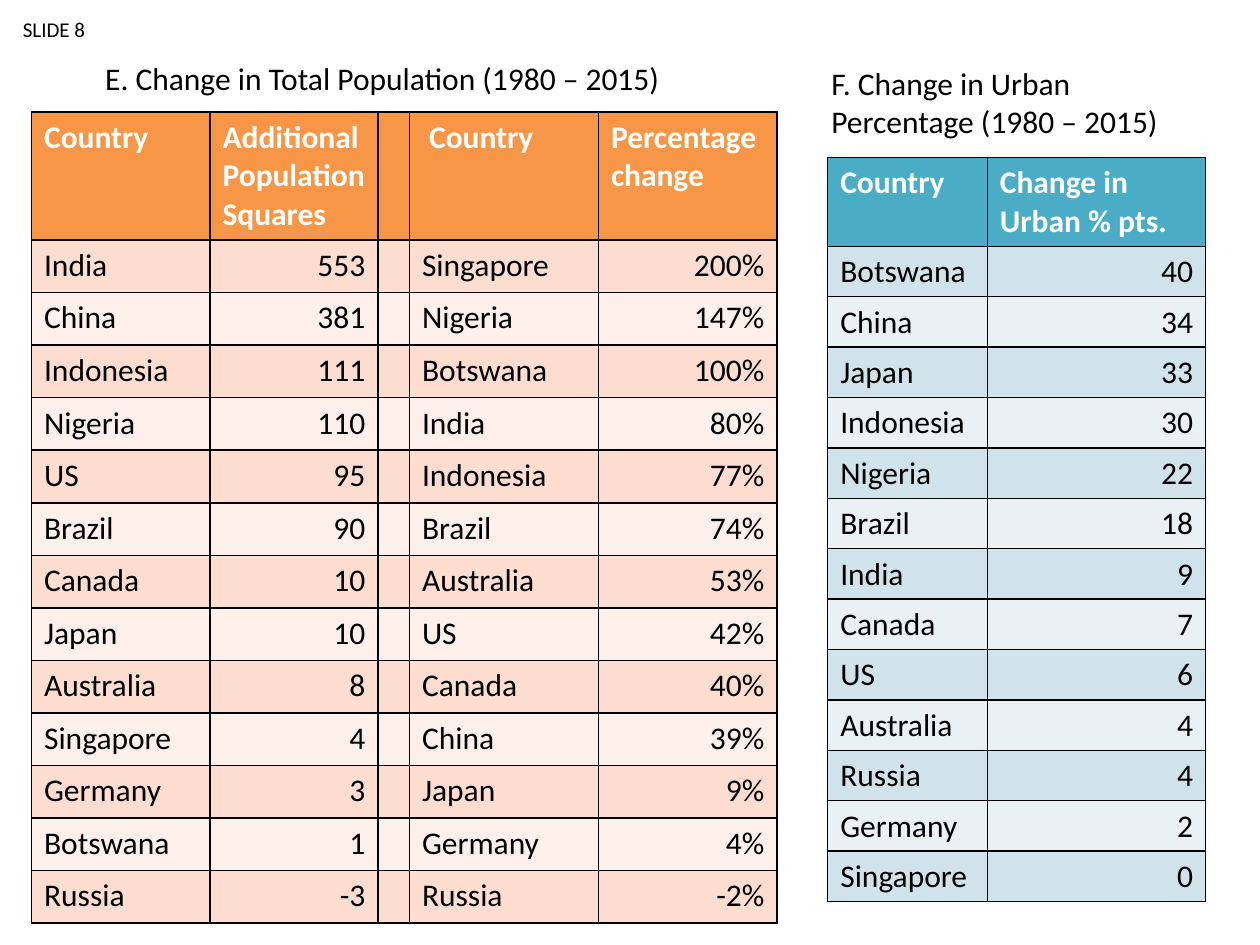
from pptx import Presentation
from pptx.dml.color import RGBColor
from pptx.enum.text import MSO_AUTO_SIZE as AutoSize, PP_ALIGN as Align
from pptx.oxml import parse_xml
from pptx.oxml.ns import nsdecls
from pptx.util import Pt

# Content
LABELS = [
    {"text": "E. Change in Total Population (1980 – 2015)",
     "box": (53, 30, 337, 29), "size": 18, "wrap": False},
    {"text": "F. Change in Urban Percentage (1980 – 2015)",
     "box": (468, 33, 222, 51), "size": 18, "wrap": True},
    {"text": "SLIDE 8", "box": (6, 6, 50, 22), "size": 12, "wrap": False},
]

POPULATION = {
    "left": 18, "top": 64, "columns": [102, 96, 18, 108, 102],
    "header_height": 73.2, "row_height": 30.04, "number_columns": (1, 4),
    "header_fill": "F79646", "bands": ("FCDDCF", "FDEFE9"),
    "header": ("Country", "Additional Population Squares", "", " Country",
               "Percentage change"),
    "rows": [
        ("India", "553", "", "Singapore", "200%"),
        ("China", "381", "", "Nigeria", "147%"),
        ("Indonesia", "111", "", "Botswana", "100%"),
        ("Nigeria", "110", "", "India", "80%"),
        ("US", "95", "", "Indonesia", "77%"),
        ("Brazil", "90", "", "Brazil", "74%"),
        ("Canada", "10", "", "Australia", "53%"),
        ("Japan", "10", "", "US", "42%"),
        ("Australia", "8", "", "Canada", "40%"),
        ("Singapore", "4", "", "China", "39%"),
        ("Germany", "3", "", "Japan", "9%"),
        ("Botswana", "1", "", "Germany", "4%"),
        ("Russia", "-3", "", "Russia", "-2%"),
    ],
}

URBAN = {
    "left": 473, "top": 90, "columns": [91.2, 124.8],
    "header_height": 50.4, "row_height": 28.8, "number_columns": (1,),
    "header_fill": "4BACC6", "bands": ("D0E3EA", "E9F1F5"),
    "header": ("Country", "Change in Urban % pts."),
    "rows": [
        ("Botswana", "40"), ("China", "34"), ("Japan", "33"),
        ("Indonesia", "30"), ("Nigeria", "22"), ("Brazil", "18"),
        ("India", "9"), ("Canada", "7"), ("US", "6"), ("Australia", "4"),
        ("Russia", "4"), ("Germany", "2"), ("Singapore", "0"),
    ],
}

CELL_FORMAT = {"margin_left": Pt(7.2), "margin_right": Pt(7.2),
               "margin_top": Pt(3.6), "margin_bottom": Pt(3.2)}


def color(hex_value):
    return RGBColor.from_string(hex_value)


def apply_format(target, values):
    for name, value in values.items():
        setattr(target, name, value)


def format_font(font, size, hex_value, bold=False):
    apply_format(font, {"name": "Calibri", "size": Pt(size), "bold": bold})
    font.color.rgb = color(hex_value)


def add_borders(cell, hex_value="000000", width=Pt(1)):
    properties = cell._tc.get_or_add_tcPr()
    for side in "LRTB":
        properties.append(parse_xml(
            f'<a:ln{side} {nsdecls("a")} w="{int(width)}"><a:solidFill>'
            f'<a:srgbClr val="{hex_value}"/></a:solidFill></a:ln{side}>'))


def fill_cell(cell, text, fill, text_color, bold, align):
    apply_format(cell, CELL_FORMAT)
    add_borders(cell)
    cell.fill.solid()
    cell.fill.fore_color.rgb = color(fill)
    cell.text = text
    paragraph = cell.text_frame.paragraphs[0]
    paragraph.alignment = align
    format_font(paragraph.font, 18, text_color, bold)
    for run in paragraph.runs:
        format_font(run.font, 18, text_color, bold)


def add_data_table(slide, data):
    rows = [data["header"], *data["rows"]]
    heights = [data["header_height"]] + [data["row_height"]] * len(data["rows"])
    table = slide.shapes.add_table(
        len(rows), len(data["columns"]), Pt(data["left"]), Pt(data["top"]),
        Pt(sum(data["columns"])), Pt(sum(heights))).table
    apply_format(table, {"first_row": False, "horz_banding": False})
    for column, width in zip(table.columns, data["columns"]):
        column.width = Pt(width)
    for row_index, texts in enumerate(rows):
        table.rows[row_index].height = Pt(heights[row_index])
        is_header = row_index == 0
        fill = data["header_fill"] if is_header else data["bands"][(row_index - 1) % 2]
        for column_index, text in enumerate(texts):
            is_number = not is_header and column_index in data["number_columns"]
            fill_cell(table.cell(row_index, column_index), text, fill,
                      "FFFFFF" if is_header else "000000", is_header,
                      Align.RIGHT if is_number else Align.LEFT)


def add_label(slide, label):
    frame = slide.shapes.add_textbox(*map(Pt, label["box"])).text_frame
    apply_format(frame, {"text": label["text"], "word_wrap": label["wrap"],
                         "auto_size": AutoSize.SHAPE_TO_FIT_TEXT})
    format_font(frame.paragraphs[0].runs[0].font, label["size"], "000000")


def main():
    presentation = Presentation()
    apply_format(presentation, {"slide_width": Pt(720), "slide_height": Pt(540)})
    slide = presentation.slides.add_slide(presentation.slide_layouts[6])

    # Tables
    for data in (POPULATION, URBAN):
        add_data_table(slide, data)

    # Table headings and slide number
    for label in LABELS:
        add_label(slide, label)

    presentation.save("out.pptx")


if __name__ == "__main__":
    main()
